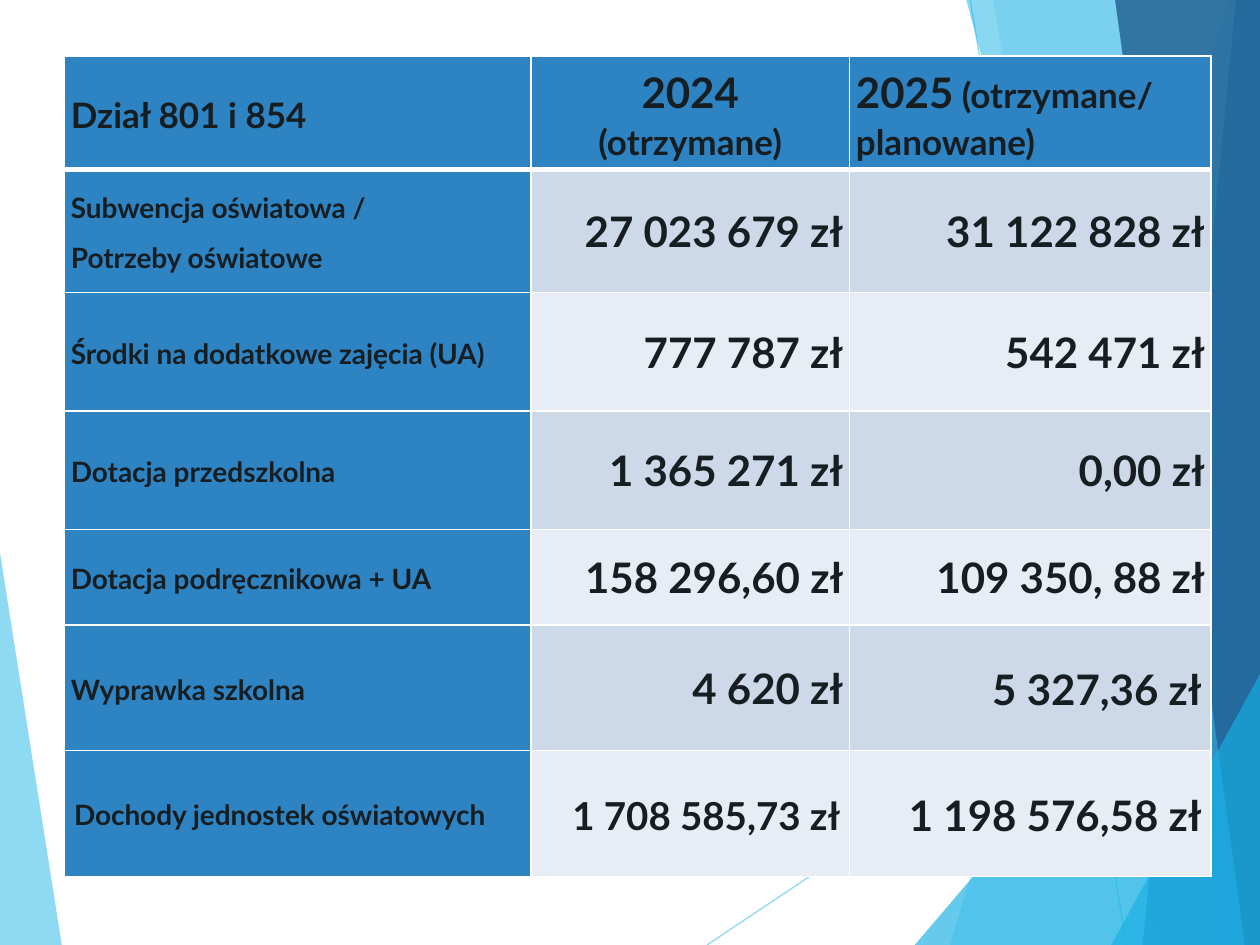
from lxml.etree import SubElement
from pptx import Presentation
from pptx.dml.color import RGBColor
from pptx.enum.shapes import MSO_CONNECTOR as Connector
from pptx.enum.text import MSO_ANCHOR as Anchor, PP_ALIGN as Align
from pptx.oxml.ns import qn
from pptx.util import Pt

COLORS = {
    "sky": "5FCBEF", "azure": "17B0E4", "blue": "2E83C3", "navy": "226292",
    "ink": "161E22", "white": "FFFFFF", "band": "CDD9E9", "pale": "E8EDF5",
}
FONT = "Lato"
COLUMN_WIDTHS = [266.4, 182.2, 206.6]
ROW_HEIGHTS = [64.8, 70.5, 67.7, 67.7, 54.7, 72, 72]
HEADINGS = [
    [("Dział 801 i 854", 20)],
    [("2024\n", 24), ("(otrzymane)", 20)],
    [("2025", 24), (" (otrzymane/\nplanowane)", 20)],
]
INCOMES = [
    (["Subwencja oświatowa /", "Potrzeby oświatowe"], "27 023 679 zł", "31 122 828 zł"),
    (["Środki na dodatkowe zajęcia (UA)"], "777 787 zł", "542 471 zł"),
    (["Dotacja przedszkolna"], "1 365 271 zł", "0,00 zł"),
    (["Dotacja podręcznikowa + UA"], "158 296,60 zł", "109 350, 88 zł"),
    (["Wyprawka szkolna"], "4 620 zł", "5 327,36 zł"),
    (["Dochody jednostek oświatowych"], "1 708 585,73 zł", "1 198 576,58 zł"),
]
NARROW = {"margin_left": Pt(3.6), "margin_right": Pt(3.6),
          "margin_top": Pt(0.7), "margin_bottom": Pt(0)}
WIDE = {"margin_left": Pt(5.4), "margin_right": Pt(5.4),
        "margin_top": Pt(0), "margin_bottom": Pt(0)}
WIDE_CELLS = {(5, 2), (6, 0), (6, 1), (6, 2)}


def apply(target, formats):
    for name, value in formats.items():
        setattr(target, name, value)


def color(name):
    return RGBColor.from_string(COLORS[name])


def set_opacity(color_parent, percent):
    tint = color_parent.find(".//" + qn("a:srgbClr"))
    SubElement(tint, qn("a:alpha")).set("val", str(percent * 1000))


def add_facet(slide, corners, fill, opacity):
    points = [(Pt(x), Pt(y)) for x, y in corners]
    builder = slide.shapes.build_freeform(*points[0], scale=1.0)
    builder.add_line_segments(points[1:], close=True)
    facet = builder.convert_to_shape()
    facet.shadow.inherit = False
    facet.fill.solid()
    facet.fill.fore_color.rgb = color(fill)
    set_opacity(facet.fill._xPr, opacity)
    facet.line.fill.background()


def add_ray(slide, start, end):
    ray = slide.shapes.add_connector(
        Connector.STRAIGHT, *[Pt(value) for value in (*start, *end)])
    ray.line.width = Pt(0.75)
    ray.line.color.rgb = color("sky")
    properties = ray._element.spPr
    set_opacity(properties, 70)
    SubElement(properties, qn("a:effectLst"))


def add_backdrop(slide, left, top, width, height):
    right, bottom = left + width, top + height

    def strip(top_x, bottom_x, fill, opacity):
        corners = [(left + top_x, top), (left + bottom_x, bottom),
                   (right, bottom), (right, top)]
        add_facet(slide, corners, fill, opacity)

    def wedge(foot_x, peak_y, fill, opacity):
        corners = [(left + foot_x, bottom), (right, top + peak_y), (right, bottom)]
        add_facet(slide, corners, fill, opacity)

    add_facet(slide, [(left, top + 316), (left + 35.3, bottom), (left, bottom)], "sky", 70)
    add_ray(slide, (left + 404, bottom), (right, top + 329))
    add_ray(slide, (left + 554.4, top), (left + 643.7, bottom))
    strip(702, 543, "sky", 36)
    strip(567.4, 661.7, "sky", 20)
    wedge(522.7, 308.9, "azure", 66)
    strip(552.2, 698.4, "azure", 50)
    strip(706.3, 653, "blue", 70)
    strip(637.2, 711.4, "navy", 82)
    wedge(635, 385.2, "azure", 66)


def set_borders(cell, widths):
    properties = cell._tc.get_or_add_tcPr()
    for side, width in zip("LRTB", widths):
        border = SubElement(properties, qn(f"a:ln{side}"), w=str(Pt(width)))
        tint = SubElement(SubElement(border, qn("a:solidFill")), qn("a:srgbClr"))
        tint.set("val", COLORS["white"])


def write_paragraph(paragraph, pieces, formats):
    apply(paragraph, {"space_after": Pt(8), **formats})
    for text, size in pieces:
        for index, line in enumerate(text.split("\n")):
            if index:
                paragraph.add_line_break()
            if line:
                run = paragraph.add_run()
                run.text = line
                apply(run.font, {"name": FONT, "size": Pt(size), "bold": True})
                run.font.color.rgb = color("ink")


def fill_cell(table, row, column, paragraphs, fill, formats):
    cell = table.cell(row, column)
    margins = WIDE if (row, column) in WIDE_CELLS else NARROW
    apply(cell, {"vertical_anchor": Anchor.MIDDLE, **margins})
    set_borders(cell, (1, 1, 3 if row == 1 else 1, 3 if row == 0 else 1))
    cell.fill.solid()
    cell.fill.fore_color.rgb = color(fill)
    frame = cell.text_frame
    for index, pieces in enumerate(paragraphs):
        paragraph = frame.add_paragraph() if index else frame.paragraphs[0]
        write_paragraph(paragraph, pieces, formats)


def add_income_table(slide, left, top, width, height):
    table = slide.shapes.add_table(
        len(ROW_HEIGHTS), len(COLUMN_WIDTHS),
        Pt(left), Pt(top), Pt(width), Pt(height)).table
    apply(table, {"first_row": False, "horz_banding": False})
    for column, share in zip(table.columns, COLUMN_WIDTHS):
        column.width = Pt(width * share / sum(COLUMN_WIDTHS))
    for row, share in zip(table.rows, ROW_HEIGHTS):
        row.height = Pt(height * share / sum(ROW_HEIGHTS))

    for column, pieces in enumerate(HEADINGS):
        align = Align.CENTER if column == 1 else Align.LEFT
        fill_cell(table, 0, column, [pieces], "blue",
                  {"alignment": align, "line_spacing": 1.07})

    for row, (labels, *amounts) in enumerate(INCOMES, 1):
        fill_cell(table, row, 0, [[(label, 16)] for label in labels], "blue",
                  {"alignment": Align.LEFT, "line_spacing": 1.07})
        for column, amount in enumerate(amounts, 1):
            formats = {"alignment": Align.RIGHT}
            if (row, column) in WIDE_CELLS:
                formats["line_spacing"] = 1.07
            if (row, column) == (4, 2):
                formats["space_after"] = Pt(0)
            size = 22 if (row, column) == (6, 1) else 24
            fill_cell(table, row, column, [[(amount, size)]],
                      "band" if row % 2 else "pale", formats)


def main():
    deck = Presentation()
    apply(deck, {"slide_width": Pt(720), "slide_height": Pt(540)})
    slide = deck.slides.add_slide(deck.slide_layouts[6])
    add_backdrop(slide, 0, 0, 720, 540)
    add_income_table(slide, 36.9, 32, 655.2, 469)
    deck.save("out.pptx")


if __name__ == "__main__":
    main()
